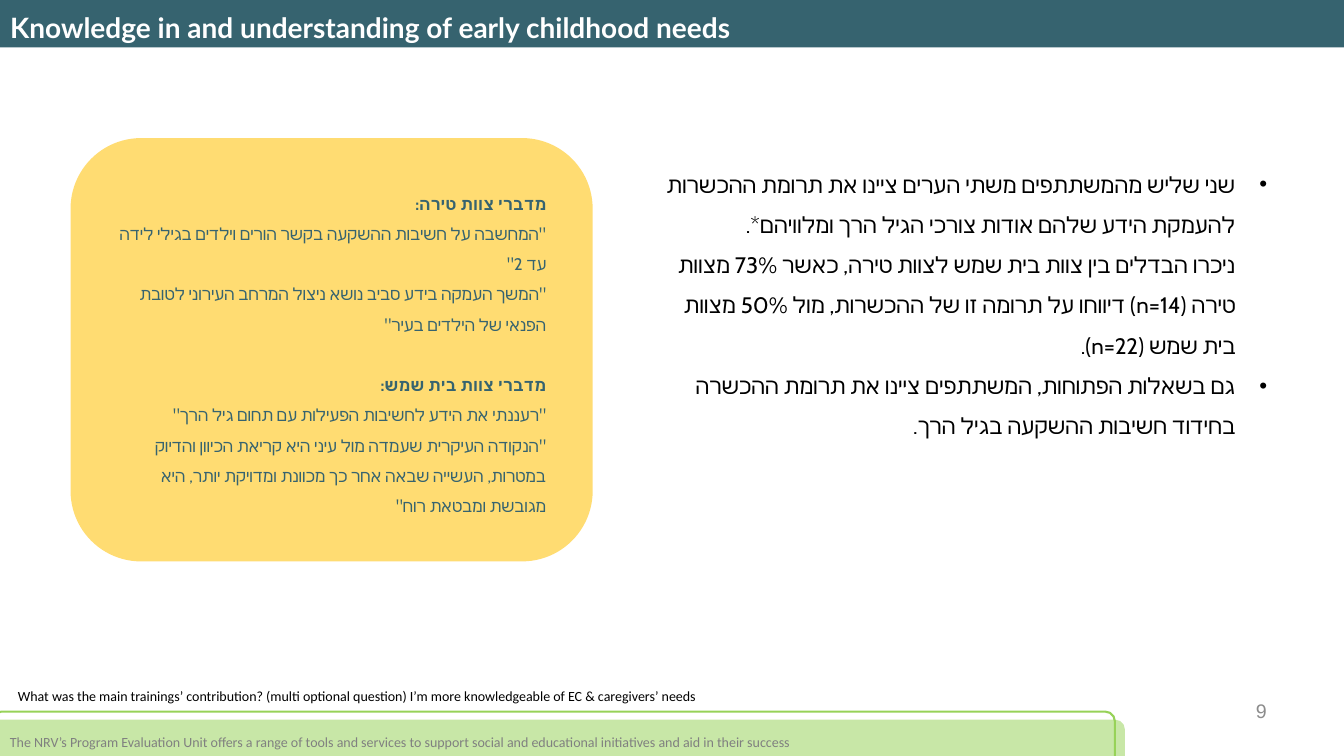
from copy import deepcopy
from pptx import Presentation
from pptx import util as u
from pptx.dml.color import RGBColor
from pptx.enum import shapes, text
from pptx.oxml.ns import qn

TEAL = RGBColor(0x36, 0x63, 0x6F)
YELLOW = RGBColor(0xFF, 0xDC, 0x72)
PALE_GREEN = RGBColor(0xC8, 0xE7, 0xA7)
GREEN = RGBColor(0x97, 0xD2, 0x58)
GREY = RGBColor(0x80, 0x80, 0x80)
LIGHT_GREY = RGBColor(0x8C, 0x8C, 0x8C)
BLACK = RGBColor(0, 0, 0)
WHITE = RGBColor(0xFF, 0xFF, 0xFF)

deck = Presentation()
deck.slide_width, deck.slide_height = u.Inches(13.33), u.Inches(7.5)
COLUMN, ROW = deck.slide_width / 40, deck.slide_height / 30
page = deck.slides.add_slide(deck.slide_layouts[1])
title, body = page.placeholders


def cells(left, top, width, height):
    return int(left * COLUMN), int(top * ROW), int(width * COLUMN), int(height * ROW)


def write(box, lines, size, color, font="Calibri", complex_font=None, bold=False,
          align=text.PP_ALIGN.LEFT, rtl=False, spacing=1.0, after=0, indent=0,
          anchor=text.MSO_ANCHOR.TOP):
    frame = box.text_frame
    frame.word_wrap = True
    frame.auto_size = text.MSO_AUTO_SIZE.NONE
    frame.vertical_anchor = anchor
    for index, line in enumerate(lines):
        para = frame.add_paragraph() if index else frame.paragraphs[0]
        para.text = line
        para.alignment = align
        para.line_spacing = spacing
        para.space_before, para.space_after = u.Pt(0), u.Pt(after)
        properties = para._p.get_or_add_pPr()
        if rtl:
            properties.set("rtl", "1")
        if indent:
            properties.set("marL", str(u.Inches(indent)))
            properties.set("indent", str(-u.Inches(indent)))
        for span in para.runs:
            span.font.size, span.font.bold = u.Pt(size), bold
            span.font.name, span.font.color.rgb = font, color
            script_font = span._r.rPr.makeelement(
                qn("a:cs"), {"typeface": complex_font or font})
            span._r.rPr.append(script_font)
        for line_break in para._p.findall(qn("a:br")):
            line_break.append(deepcopy(para.runs[0]._r.rPr))


title.left, title.top, title.width, title.height = cells(0, 0, 40, 1.88)
title.fill.solid()
title.fill.fore_color.rgb = TEAL
write(title, ["Knowledge in and understanding of early childhood needs"],
      size=20, color=WHITE, font="Lato", bold=True, spacing=1.15, after=10)

body.left, body.top, body.width, body.height = cells(19.29, 6.04, 18.72, 13.12)
write(body, [
    "שני שליש מהמשתתפים משתי הערים ציינו את תרומת ההכשרות להעמקת הידע שלהם אודות צורכי הגיל הרך ומלוויהם*.\n"
    "ניכרו הבדלים בין צוות בית שמש לצוות טירה, כאשר 73% מצוות טירה (n=14) דיווחו על תרומה זו של ההכשרות, מול 50% מצוות בית שמש (n=22).",
    "גם בשאלות הפתוחות, המשתתפים ציינו את תרומת ההכשרה בחידוד חשיבות ההשקעה בגיל הרך.",
], size=16, color=BLACK, font="Cabin", align=text.PP_ALIGN.RIGHT, rtl=True,
    spacing=1.5, indent=0.31)

footer = page.shapes.add_group_shape()
for parent, place, fill, line in [
    (page, (2.1, 5.48, 15.54, 16.8), YELLOW, None),
    (footer, (-0.39, 28.56, 33.87, 2.28), PALE_GREEN, None),
    (footer, (-0.24, 28.24, 33.42, 2.28), None, GREEN),
]:
    panel = parent.shapes.add_shape(shapes.MSO_SHAPE.ROUNDED_RECTANGLE, *cells(*place))
    panel.shadow.inherit = False
    if fill:
        panel.fill.solid()
        panel.fill.fore_color.rgb = fill
    else:
        panel.fill.background()
    if line:
        panel.line.color.rgb = line
        panel.line.width = u.Pt(1.5)
    else:
        panel.line.fill.background()

credit = footer.shapes.add_textbox(*cells(0, 28.92, 33.87, 1.08))
write(credit, ["The NRV’s Program Evaluation Unit offers a range of tools and services to support social and educational initiatives and aid in their success"],
      size=10, color=GREY)

quotes = page.shapes.add_textbox(*cells(2.79, 7.08, 13.77, 13.6))
write(quotes, [
    "מדברי צוות טירה:",
    '"המחשבה על חשיבות ההשקעה בקשר הורים וילדים בגילי לידה עד 2"',
    '"המשך העמקה בידע סביב נושא ניצול המרחב העירוני לטובת הפנאי של הילדים בעיר"',
    "מדברי צוות בית שמש:",
    '"רעננתי את הידע לחשיבות הפעילות עם תחום גיל הרך"',
    '"הנקודה העיקרית שעמדה מול עיני היא קריאת הכיוון והדיוק במטרות, העשייה שבאה אחר כך מכוונת ומדויקת יותר, היא מגובשת ומבטאת רוח"',
], size=12, color=TEAL, font="Cabin", align=text.PP_ALIGN.RIGHT, rtl=True, spacing=1.5)
first_heading, second_heading = quotes.text_frame.paragraphs[::3]
for heading in (first_heading, second_heading):
    heading.runs[0].font.bold = True
second_heading.space_before = u.Pt(21.6)

question = page.shapes.add_textbox(*cells(0.24, 27.08, 23.37, 1.08))
write(question, ["What was the main trainings’ contribution? (multi optional question) I’m more knowledgeable of EC & caregivers’ needs"],
      size=10, color=BLACK)

number = page.shapes.add_textbox(*cells(37.08, 27.4, 2.1, 1.6))
write(number, ["9"], size=14, color=LIGHT_GREY, complex_font="Arial", rtl=True,
      anchor=text.MSO_ANCHOR.MIDDLE)

deck.save("out.pptx")
